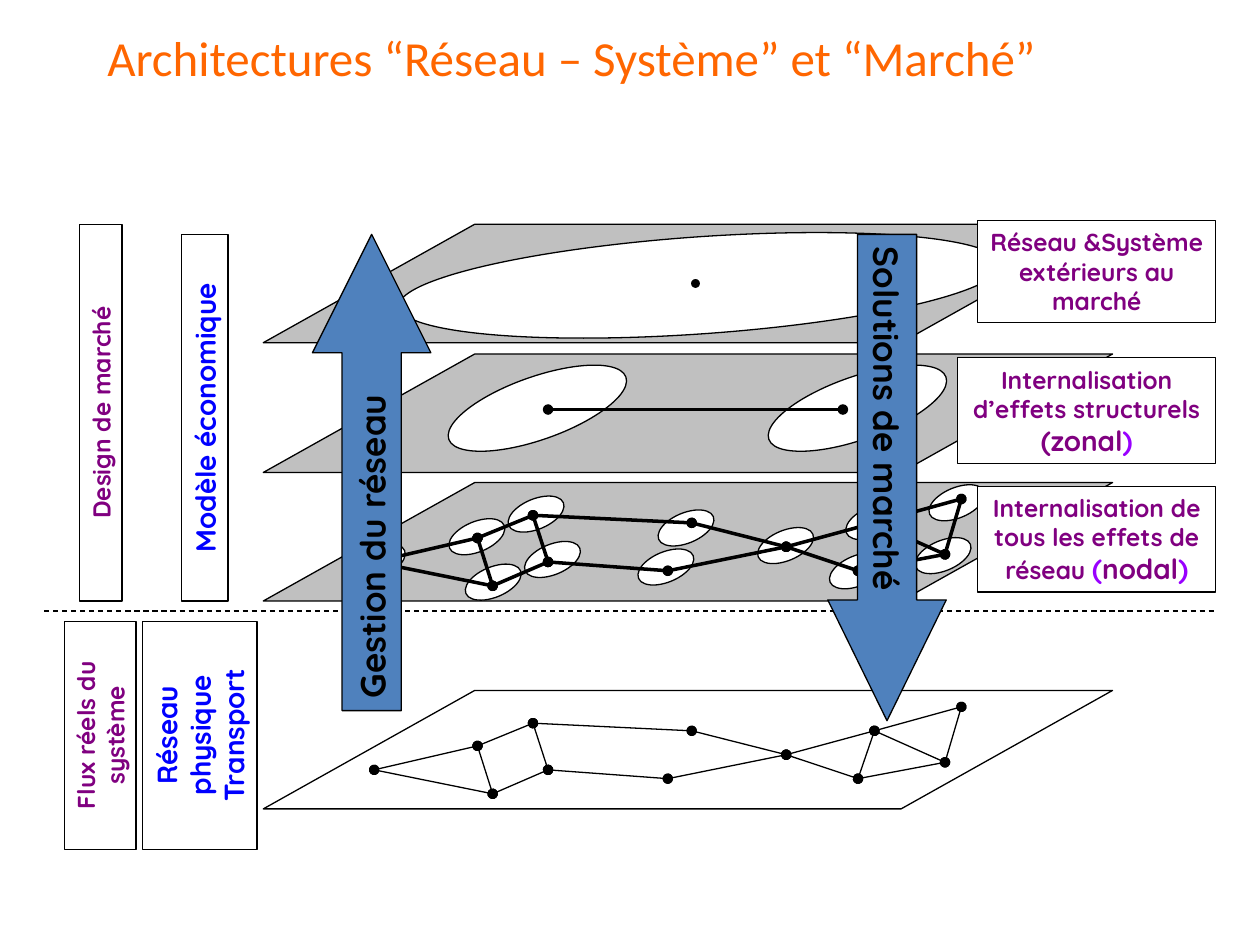
from lxml.etree import SubElement
from pptx import Presentation
from pptx.dml.color import RGBColor
from pptx.enum.dml import MSO_LINE
from pptx.enum.shapes import MSO_CONNECTOR, MSO_SHAPE
from pptx.enum.text import MSO_ANCHOR, PP_ALIGN
from pptx.oxml.ns import qn
from pptx.util import Inches, Pt

THEME = {
    "title_font": "Calibri", "font": "Quicksand",
    "title_size": 28, "arrow_size": 20, "large": 16, "small": 14,
    "thin": 0.75, "thick": 2,
    "orange": "FF6600", "purple": "800080", "violet": "9900FF", "blue": "0000FF",
    "black": "000000", "white": "FFFFFF", "grey": "C0C0C0", "arrow": "4F81BD",
}

TITLE = "Architectures “Réseau – Système” et “Marché”"

# Planes: left and size are shared, only the top changes
PLANE_LEFT, PLANE_WIDTH, PLANE_HEIGHT, PLANE_SLANT = 2.09, 6.74, 0.94, 1.785
PLANE_TOPS = {"market": 1.78, "zonal": 2.81, "nodal": 3.83, "physical": 5.48}

# Network nodes, measured on the physical plane, and their links
NODES = {
    "A": (2.97, 6.11), "B": (3.79, 5.92), "C": (3.91, 6.3), "D": (4.23, 5.74),
    "E": (4.35, 6.11), "F": (5.3, 6.18), "G": (5.49, 5.8), "H": (6.24, 5.99),
    "I": (6.81, 6.18), "J": (6.94, 5.8), "K": (7.5, 6.05), "L": (7.63, 5.61),
}
LINKS = "JL IJ FH HJ GH HI ED CA CB BA DB KL DG IK JK CE EF".split()

# Left and top of the small ellipse around each node of the nodal plane
NODE_ZONES = [
    (5.21, 4.07), (6.57, 4.41), (7.36, 3.87), (7.25, 4.29), (5.05, 4.38), (6.7, 4.02),
    (6, 4.21), (3.55, 4.14), (2.76, 4.34), (4.15, 4.32), (3.68, 4.5), (4.02, 3.96),
]
ZONE_LEFTS = [3.52, 6.06]

# Labels: box as seen (left, top, width, height), then runs (text, size, colour)
VERTICAL_LABELS = [
    ((1.13, 4.93, 0.91, 1.81), [("Réseau physique Transport", "large", "blue")]),
    ((1.44, 1.86, 0.37, 2.91), [("Modèle économique", "large", "blue")]),
    ((0.51, 4.93, 0.57, 1.81), [("Flux réels du système", "small", "purple")]),
    ((0.63, 1.78, 0.34, 2.99), [("Design de marché", "small", "purple")]),
]
SIDE_LABELS = [
    ((7.76, 3.86, 1.89, 0.84), [
        ("Internalisation de tous les effets de réseau ", "small", "purple"),
        ("(", "large", "violet"), ("nodal", "large", "purple"), (")", "large", "violet")]),
    ((7.6, 2.84, 2.05, 0.84), [
        ("Internalisation d’effets structurels ", "small", "purple"),
        ("(zonal", "large", "purple"), (")", "large", "violet")]),
    ((7.76, 1.75, 1.89, 0.81), [("Réseau &Système extérieurs au marché", "small", "purple")]),
]

# Big arrows: box, rotation, head length, text
ARROWS = [
    ((2.48, 1.86, 0.94, 3.78), 0, 1, "Gestion du réseau"),
    ((6.57, 1.86, 0.94, 3.86), 180, 1.02, "Solutions de marché"),
]


def color(name):
    return RGBColor.from_string(THEME[name])


def add_shape(shapes, kind, box, fill=None, rotation=0, adjustments=()):
    shape = shapes.add_shape(kind, *map(Inches, box))
    shape.shadow.inherit = False
    shape.rotation = rotation
    for index, value in enumerate(adjustments):
        shape.adjustments[index] = value
    if fill:
        shape.fill.solid()
        shape.fill.fore_color.rgb = color(fill)
    else:
        shape.fill.background()
    shape.line.color.rgb = color("black")
    shape.line.width = Pt(THEME["thin"])
    return shape


def add_line(shapes, start, end, width="thin", dotted_ends=True):
    line = shapes.add_connector(MSO_CONNECTOR.STRAIGHT, *map(Inches, (*start, *end)))
    line.line.color.rgb = color("black")
    line.line.width = Pt(THEME[width])
    properties = line.element.spPr
    if dotted_ends:
        outline = properties.find(qn("a:ln"))
        for tag in ("a:headEnd", "a:tailEnd"):
            SubElement(outline, qn(tag), type="oval")
    SubElement(properties, qn("a:effectLst"))
    return line


def write_runs(shape, runs, wrap=True):
    text_frame = shape.text_frame
    text_frame.word_wrap = wrap
    text_frame.vertical_anchor = MSO_ANCHOR.MIDDLE
    paragraph = text_frame.paragraphs[0]
    paragraph.alignment = PP_ALIGN.CENTER
    for text, size, run_color in runs:
        run = paragraph.add_run()
        run.text = text
        run.font.name = THEME["font"]
        run.font.size = Pt(THEME[size])
        run.font.bold = True
        run.font.color.rgb = color(run_color)


def add_label(shapes, box, runs, vertical=False):
    left, top, width, height = box
    if vertical:  # a quarter turn about the centre swaps width and height
        shift = (width - height) / 2
        box = (left + shift, top - shift, height, width)
    label = add_shape(shapes, MSO_SHAPE.RECTANGLE, box, "white", 270 if vertical else 0)
    write_runs(label, runs)


def add_plane(slide, name, fill=None):
    group = slide.shapes.add_group_shape().shapes
    box = (PLANE_LEFT, PLANE_TOPS[name], PLANE_WIDTH, PLANE_HEIGHT)
    add_shape(group, MSO_SHAPE.PARALLELOGRAM, box, fill, adjustments=[PLANE_SLANT])
    return group


def add_network(shapes, plane, width):
    rise = PLANE_TOPS["physical"] - PLANE_TOPS[plane]
    for link in LINKS:
        start, end = ((NODES[node][0], NODES[node][1] - rise) for node in link)
        add_line(shapes, start, end, width)


def main():
    presentation = Presentation()
    presentation.slide_width, presentation.slide_height = Inches(10), Inches(7.5)
    slide = presentation.slides.add_slide(presentation.slide_layouts[5])

    # Title
    title = slide.shapes.title
    title.left, title.top, title.width, title.height = map(Inches, (0.16, 0.17, 8.75, 1.22))
    title.text_frame.text = TITLE
    title.text_frame.vertical_anchor = MSO_ANCHOR.TOP
    paragraph = title.text_frame.paragraphs[0]
    paragraph.alignment = PP_ALIGN.CENTER
    font = paragraph.runs[0].font
    font.name, font.size = THEME["title_font"], Pt(THEME["title_size"])
    font.color.rgb = color("orange")

    # Market plane: one zone, one point
    market = add_plane(slide, "market", "grey")
    add_shape(market, MSO_SHAPE.OVAL, (3.16, 1.88, 4.79, 0.77), "white", 356)
    add_shape(market, MSO_SHAPE.OVAL, (5.49, 2.22, 0.06, 0.06), "black")

    # Physical plane
    add_network(add_plane(slide, "physical"), "physical", "thin")

    # Nodal plane: one zone per node
    nodal = add_plane(slide, "nodal", "grey")
    for left, top in NODE_ZONES:
        add_shape(nodal, MSO_SHAPE.OVAL, (left, top, 0.47, 0.24), "white", 337.4)
    add_network(nodal, "nodal", "thick")

    # Zonal plane: two linked zones
    zonal = add_plane(slide, "zonal", "grey")
    for left in ZONE_LEFTS:
        add_shape(zonal, MSO_SHAPE.OVAL, (left, 2.99, 1.49, 0.5), "white", 340.6)
    add_line(zonal, (4.35, 3.25), (6.69, 3.25), "thick")

    # Labels and the line between model and physical network
    for box, runs in VERTICAL_LABELS:
        add_label(slide.shapes, box, runs, vertical=True)
    divider = add_line(slide.shapes, (0.35, 4.85), (9.65, 4.85), dotted_ends=False)
    divider.line.dash_style = MSO_LINE.DASH
    for box, runs in SIDE_LABELS:
        add_label(slide.shapes, box, runs)

    # Big arrows with vertical text
    for box, rotation, head, text in ARROWS:
        arrow = add_shape(slide.shapes, MSO_SHAPE.UP_ARROW, box, "arrow", rotation, [0.5, head])
        write_runs(arrow, [(text, "arrow_size", "black")], wrap=False)
        body = arrow.element.txBody.find(qn("a:bodyPr"))
        body.set("rot", "10800000")
        body.set("vert", "eaVert")

    presentation.save("out.pptx")


if __name__ == "__main__":
    main()
